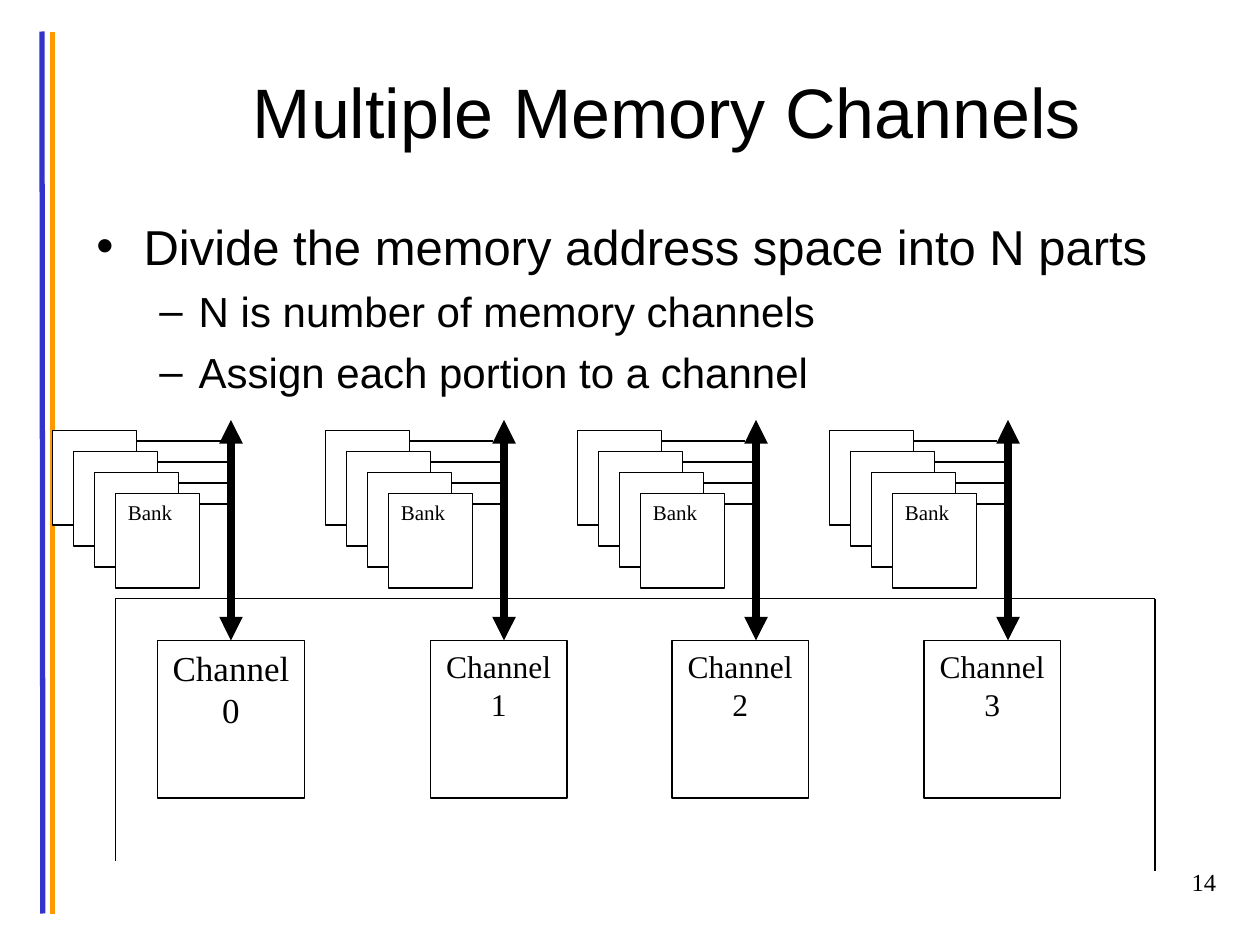
"""Build the slide on multiple memory channels."""
from lxml import etree
from pptx import Presentation
from pptx import util as u
from pptx.dml.color import RGBColor
from pptx.enum import shapes, text
from pptx.oxml import ns

BLACK = RGBColor(0x00, 0x00, 0x00)
WHITE = RGBColor(0xFF, 0xFF, 0xFF)
BLUE = RGBColor(0x33, 0x33, 0xCC)
ORANGE = RGBColor(0xFF, 0x99, 0x00)
SANS, SERIF = "Arial", "Times New Roman"
BANKS, STEP = 4, 12
BANK_WIDTH, BANK_HEIGHT = 48, 54
BANK_TOP = 246

presentation = Presentation()
presentation.slide_width, presentation.slide_height = u.Pt(720), u.Pt(540)
slide = presentation.slides.add_slide(presentation.slide_layouts[5])


def write(paragraph, content, size, name, **formats):
    run = paragraph.add_run()
    run.text = content
    run.font.size, run.font.name = u.Pt(size), name
    run.font.color.rgb = BLACK
    for key, value in formats.items():
        setattr(paragraph, key, value)


def draw_line(start, end, color=BLACK, width=0.75, arrows=False):
    points = [u.Pt(value) for value in (*start, *end)]
    connector = slide.shapes.add_connector(shapes.MSO_CONNECTOR.STRAIGHT, *points)
    connector.line.width = u.Pt(width)
    connector.line.color.rgb = color
    properties = connector._element.spPr
    if arrows:
        for tag in ("a:headEnd", "a:tailEnd"):
            etree.SubElement(connector.line._ln, ns.qn(tag), type="triangle")
    etree.SubElement(properties, ns.qn("a:effectLst"))
    return connector


draw_line((24, 18), (24.5, 522), BLUE, 3)
draw_line((30, 18), (30, 522), ORANGE, 3)

title = slide.shapes.title
title_place = {"left": 54, "top": 18, "width": 654, "height": 90}
for key, value in title_place.items():
    setattr(title, key, u.Pt(value))
title.text_frame.vertical_anchor = text.MSO_ANCHOR.MIDDLE
write(title.text_frame.paragraphs[0], "Multiple Memory Channels", 40, SANS,
      alignment=text.PP_ALIGN.CENTER)

body = slide.shapes.add_textbox(u.Pt(48), u.Pt(120), u.Pt(654), u.Pt(120))
body.text_frame.word_wrap = True
levels = [
    {"size": 28, "before": 7, "margin": 27, "hanging": 27, "bullet": "•"},
    {"size": 24, "before": 6, "margin": 58.5, "hanging": 22.5, "bullet": "–"},
]
points = [
    ("Divide the memory address space into N parts", 0),
    ("N is number of memory channels", 1),
    ("Assign each portion to a channel", 1),
]
for index, (content, level) in enumerate(points):
    style = levels[level]
    frame = body.text_frame
    paragraph = frame.add_paragraph() if index else frame.paragraphs[0]
    write(paragraph, content, style["size"], SANS, level=level,
          space_before=u.Pt(style["before"]))
    properties = paragraph._p.get_or_add_pPr()
    properties.set("marL", str(u.Pt(style["margin"])))
    properties.set("indent", str(-u.Pt(style["hanging"])))
    etree.SubElement(properties, ns.qn("a:buFont"), typeface=SANS)
    etree.SubElement(properties, ns.qn("a:buChar"), char=style["bullet"])

outline = [(66, 492), (66, 342), (660, 342), (660, 498)]
for start, end in zip(outline, outline[1:]):
    draw_line(start, end)

channels = [(90, 84, 20, 132), (246, 78, 18, 288), (384, 78, 18, 432), (528, 78, 18, 576)]
for number, (left, width, size, bus) in enumerate(channels):
    bank_left = bus - 102
    boxes = [(left, 366, width, 90, f"Channel {number}", size, text.PP_ALIGN.CENTER)]
    for bank in range(BANKS):
        label = "Bank" if bank == BANKS - 1 else ""
        boxes.append((bank_left + bank * STEP, BANK_TOP + bank * STEP,
                      BANK_WIDTH, BANK_HEIGHT, label, 12, text.PP_ALIGN.LEFT))
    drawn = []
    for *place, label, label_size, alignment in boxes:
        shape = slide.shapes.add_shape(shapes.MSO_SHAPE.RECTANGLE,
                                       *[u.Pt(value) for value in place])
        shape.shadow.inherit = False
        shape.fill.solid()
        shape.fill.fore_color.rgb = WHITE
        shape.line.color.rgb = BLACK
        shape.line.width = u.Pt(0.75)
        shape.text_frame.vertical_anchor = text.MSO_ANCHOR.TOP
        if label:
            write(shape.text_frame.paragraphs[0], label, label_size, SERIF, alignment=alignment)
        drawn.append(shape)

    arrow = draw_line((bus, 240), (bus, 366), width=4.5, arrows=True)
    if left + width / 2 == bus:
        arrow.end_connect(drawn[0], 0)
    for bank in range(BANKS):
        height = BANK_TOP + 6 + bank * STEP
        stub_end = bus if bank else bus - 6
        draw_line((bank_left + BANK_WIDTH + bank * STEP, height), (stub_end, height))

page = slide.shapes.add_textbox(u.Pt(552), u.Pt(492), u.Pt(150), u.Pt(36))
page.text_frame.word_wrap = True
write(page.text_frame.paragraphs[0], "14", 14, SERIF, alignment=text.PP_ALIGN.RIGHT)

presentation.save("out.pptx")
